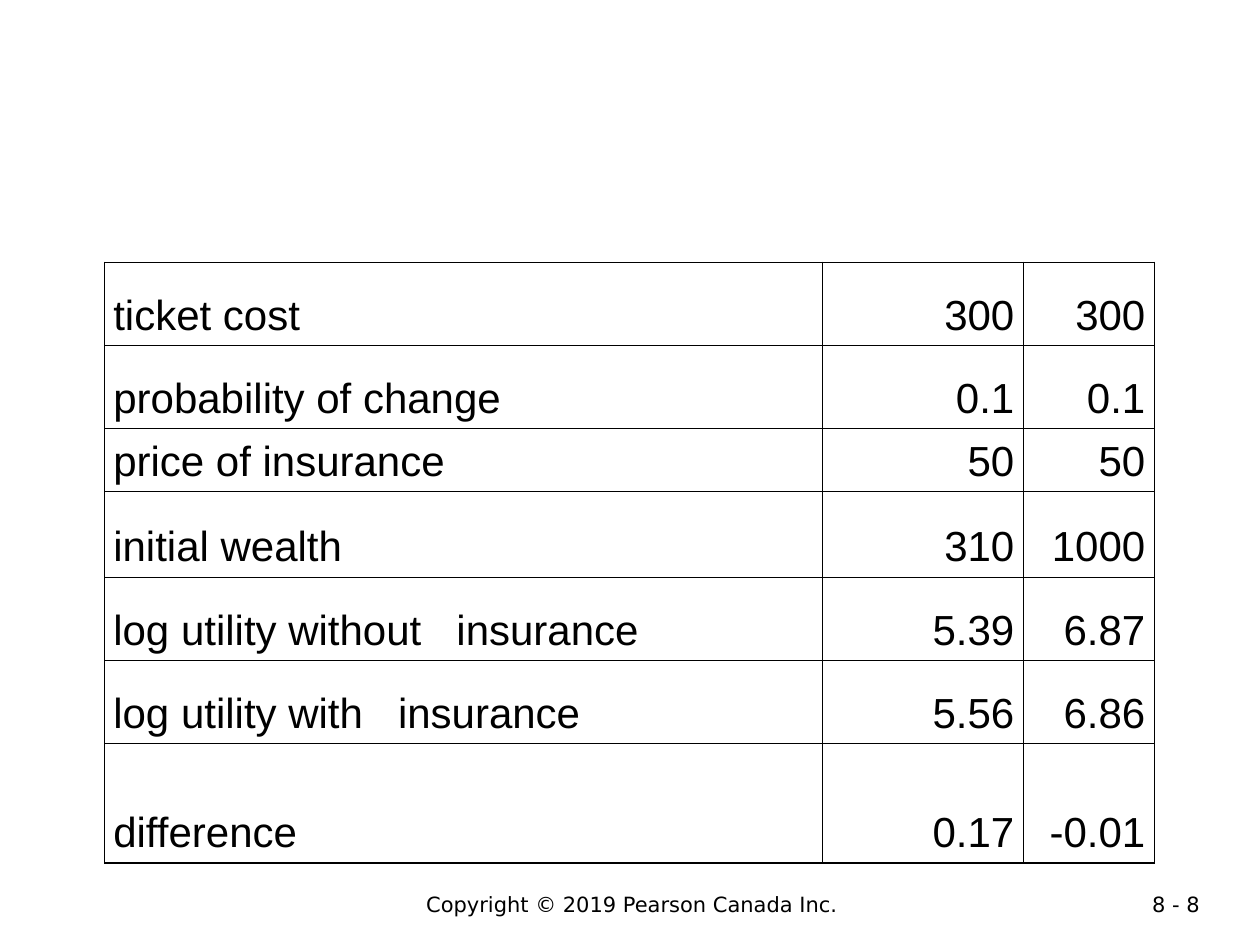
from dataclasses import dataclass

from lxml import etree
from pptx import Presentation
from pptx import util as u
from pptx.dml import color
from pptx.enum import text
from pptx.oxml import ns


@dataclass(frozen=True)
class Theme:
    ink: color.RGBColor = color.RGBColor(0, 0, 0)
    paper: color.RGBColor = color.RGBColor(255, 255, 255)
    table_font: str = "Arial"
    footer_font: str = "DejaVu Sans"
    table_size: int = 24
    footer_size: int = 12
    border: float = 0.75
    wide_gap: float = 13.3  # points added to the space inside a label


@dataclass(frozen=True)
class Row:
    label: tuple[str, ...]  # parts are set apart by a wide gap
    low_wealth: str
    high_wealth: str
    height: float


@dataclass(frozen=True)
class Footer:
    words: str
    left: float
    width: float
    height: float
    align: text.PP_ALIGN


THEME = Theme()
LEFT, CENTER, RIGHT = text.PP_ALIGN.LEFT, text.PP_ALIGN.CENTER, text.PP_ALIGN.RIGHT
COLUMNS = (5.7, 1.59, 1.04)
ROWS = (
    Row(("ticket cost",), "300", "300", 0.66),
    Row(("probability of change",), "0.1", "0.1", 0.66),
    Row(("price of insurance",), "50", "50", 0.5),
    Row(("initial wealth",), "310", "1000", 0.68),
    Row(("log utility without", "insurance"), "5.39", "6.87", 0.66),
    Row(("log utility with", "insurance"), "5.56", "6.86", 0.66),
    Row(("difference",), "0.17", "-0.01", 0.95),
)
FOOTERS = (
    Footer("Copyright © 2019 Pearson Canada Inc.", 1.64, 6.75, 0.3, CENTER),
    Footer("8 - 8", 8.62, 1, 0.22, RIGHT),
)


def write(frame, *parts: str, font: str, size: float, align=LEFT) -> None:
    """Write one paragraph, with a widened space between its parts."""
    paragraph = frame.paragraphs[0]
    paragraph.alignment = align
    for index, part in enumerate(parts):
        for words in ((" ", part) if index else (part,)):
            run = paragraph.add_run()
            run.text = words
            run.font.name, run.font.size = font, u.Pt(size)
            run.font.color.rgb = THEME.ink
            if words == " ":
                run.font._element.set("spc", str(round(THEME.wide_gap * 100)))


def add_borders(cell) -> None:
    properties = cell._tc.get_or_add_tcPr()
    for side in ("a:lnL", "a:lnR", "a:lnT", "a:lnB"):
        line = etree.SubElement(properties, ns.qn(side), w=str(u.Pt(THEME.border)))
        fill = etree.SubElement(line, ns.qn("a:solidFill"))
        etree.SubElement(fill, ns.qn("a:srgbClr"), val=str(THEME.ink))


def fill_cell(cell, *parts: str, align) -> None:
    add_borders(cell)
    cell.fill.solid()
    cell.fill.fore_color.rgb = THEME.paper
    cell.vertical_anchor = text.MSO_ANCHOR.BOTTOM
    cell.margin_left = cell.margin_right = u.Inches(0.07)
    cell.margin_top = cell.margin_bottom = u.Inches(0.05)
    write(cell.text_frame, *parts, font=THEME.table_font, size=THEME.table_size, align=align)


def add_utility_table(slide) -> None:
    height = sum(row.height for row in ROWS)
    table = slide.shapes.add_table(
        len(ROWS), len(COLUMNS), u.Inches(0.83), u.Inches(2.08),
        u.Inches(sum(COLUMNS)), u.Inches(height)).table
    table.first_row = table.horz_banding = False
    for column, width in zip(table.columns, COLUMNS):
        column.width = u.Inches(width)
    for table_row, row in zip(table.rows, ROWS):
        table_row.height = u.Inches(row.height)
        label, low, high = table_row.cells
        fill_cell(label, *row.label, align=LEFT)
        fill_cell(low, row.low_wealth, align=RIGHT)
        fill_cell(high, row.high_wealth, align=RIGHT)


def add_footer(slide, footer: Footer) -> None:
    frame = slide.shapes.add_textbox(
        u.Inches(footer.left), u.Inches(7.03),
        u.Inches(footer.width), u.Inches(footer.height)).text_frame
    frame.word_wrap = True
    write(frame, footer.words, font=THEME.footer_font, size=THEME.footer_size,
          align=footer.align)


def main() -> None:
    deck = Presentation()
    deck.slide_width, deck.slide_height = u.Inches(10), u.Inches(7.5)
    slide = deck.slides.add_slide(deck.slide_layouts[6])
    # Copyright line and page number
    for footer in FOOTERS:
        add_footer(slide, footer)
    # Insurance comparison at two levels of wealth
    add_utility_table(slide)
    deck.save("out.pptx")


if __name__ == "__main__":
    main()
